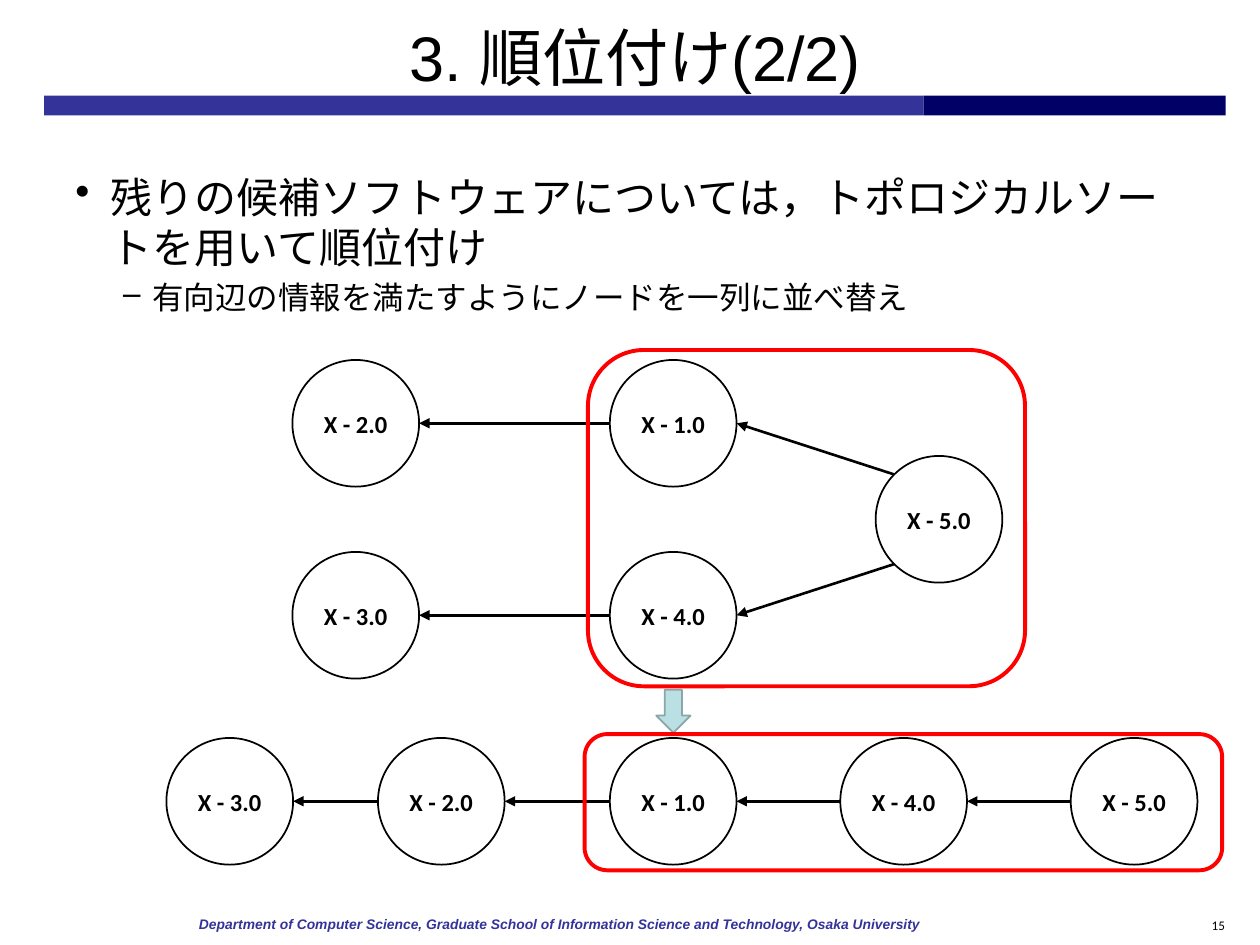
from dataclasses import dataclass
from itertools import pairwise
from math import sqrt

import pptx
import pptx.dml.color
import pptx.enum.shapes
import pptx.enum.text
import pptx.oxml
import pptx.oxml.ns
import pptx.util

Pt = pptx.util.Pt
Color = pptx.dml.color.RGBColor
Shape = pptx.enum.shapes.MSO_SHAPE
Align = pptx.enum.text.PP_ALIGN
Anchor = pptx.enum.text.MSO_ANCHOR


@dataclass(frozen=True)
class Theme:
    ink: Color = Color(0, 0, 0)
    bar: Color = Color(0x33, 0x33, 0x99)
    bar_end: Color = Color(0, 0, 0x66)
    highlight: Color = Color(0xFF, 0, 0)
    arrow_fill: Color = Color(0xBB, 0xE0, 0xE3)
    arrow_line: Color = Color(0x8A, 0xA6, 0xA8)
    heading_font: str = "Arial"
    body_font: str = "Calibri"
    title_size: float = 36
    body_size: float = 24
    detail_size: float = 18
    node_size: float = 14
    footer_size: float = 7.9
    number_size: float = 7.5


THEME = Theme()
DIAMETER = 72.4


@dataclass(frozen=True)
class Box:
    left: float
    top: float
    width: float
    height: float


@dataclass(frozen=True)
class Node:
    label: str
    left: float
    top: float

    @property
    def middle(self) -> float:
        return self.top + DIAMETER / 2

    @property
    def right(self) -> float:
        return self.left + DIAMETER


@dataclass(frozen=True)
class Bullet:
    text: str
    mark: str
    size: float
    margin: float
    hanging: float
    space_before: float


def add_run(paragraph, text: str, size: float, font: str, color: Color = THEME.ink,
            bold: bool = False, italic: bool = False) -> None:
    run = paragraph.add_run()
    run.text = text
    run.font.size = Pt(size)
    run.font.name = font
    run.font.color.rgb = color
    run.font.bold = bold
    run.font.italic = italic


def add_text_frame(slide, box: Box):
    text_box = slide.shapes.add_textbox(
        Pt(box.left), Pt(box.top), Pt(box.width), Pt(box.height))
    text_box.text_frame.word_wrap = True
    return text_box.text_frame


def add_shape(slide, kind, box: Box, fill: Color | None = None,
              line: Color | None = None, weight: float = 1):
    shape = slide.shapes.add_shape(
        kind, Pt(box.left), Pt(box.top), Pt(box.width), Pt(box.height))
    shape.shadow.inherit = False
    if fill is None:
        shape.fill.background()
    else:
        shape.fill.solid()
        shape.fill.fore_color.rgb = fill
    if line is None:
        shape.line.fill.background()
    else:
        shape.line.color.rgb = line
        shape.line.width = Pt(weight)
    return shape


def add_node(slide, node: Node) -> None:
    box = Box(node.left, node.top, DIAMETER, DIAMETER)
    frame = add_shape(slide, Shape.OVAL, box, line=THEME.ink).text_frame
    frame.vertical_anchor = Anchor.MIDDLE
    frame.margin_left = frame.margin_right = 0
    frame.paragraphs[0].alignment = Align.CENTER
    add_run(frame.paragraphs[0], node.label, THEME.node_size, THEME.body_font, bold=True)


def add_arrow(slide, source: Node, target: Node) -> None:
    """Point from the near edge of source to the right side of target."""
    start_x, start_y = source.left, source.middle
    if source.middle != target.middle:
        radius = DIAMETER / 2
        diagonal = radius / sqrt(2)
        start_x += radius - diagonal
        start_y += diagonal if target.middle > source.middle else -diagonal
    connector = slide.shapes.add_connector(
        pptx.enum.shapes.MSO_CONNECTOR.STRAIGHT,
        Pt(start_x), Pt(start_y), Pt(target.right), Pt(target.middle))
    connector.line.color.rgb = THEME.ink
    connector.line.width = Pt(1.5)
    line = connector.line._get_or_add_ln()
    pptx.oxml.ns.qn("a:tailEnd")
    line.append(pptx.oxml.parse_xml(
        f'<a:tailEnd {pptx.oxml.ns.nsdecls("a")} type="triangle"/>'))
    connector._element.spPr.append(pptx.oxml.parse_xml(
        f'<a:effectLst {pptx.oxml.ns.nsdecls("a")}/>'))


def add_bullet(paragraph, bullet: Bullet) -> None:
    properties = paragraph._p.get_or_add_pPr()
    properties.set("marL", str(Pt(bullet.margin)))
    properties.set("indent", str(-Pt(bullet.hanging)))
    properties.append(pptx.oxml.parse_xml(
        f'<a:buChar {pptx.oxml.ns.nsdecls("a")} char="{bullet.mark}"/>'))
    paragraph.space_before = Pt(bullet.space_before)
    add_run(paragraph, bullet.text, bullet.size, THEME.body_font)


def main() -> None:
    presentation = pptx.Presentation()
    presentation.slide_width, presentation.slide_height = Pt(720), Pt(540)
    slide = presentation.slides.add_slide(presentation.slide_layouts[6])

    # Title and the two-tone bar below it
    add_shape(slide, Shape.RECTANGLE, Box(25.2, 54.7, 502.6, 11.3), THEME.bar)
    add_shape(slide, Shape.RECTANGLE, Box(527.8, 54.7, 172.6, 11.3), THEME.bar_end)
    title = add_text_frame(slide, Box(25.2, 9.4, 675.4, 45.4))
    title.vertical_anchor = Anchor.MIDDLE
    title.paragraphs[0].alignment = Align.CENTER
    add_run(title.paragraphs[0], "3. 順位付け(2/2)", THEME.title_size, THEME.heading_font)

    # Bulleted text
    bullets = [
        Bullet("残りの候補ソフトウェアについては，トポロジカルソートを用いて順位付け",
               "•", THEME.body_size, 20.2, 20.2, 0),
        Bullet("有向辺の情報を満たすようにノードを一列に並べ替え",
               "–", THEME.detail_size, 43.9, 16.6, 3.6),
    ]
    body = add_text_frame(slide, Box(36, 94.3, 648, 100))
    for index, bullet in enumerate(bullets):
        add_bullet(body.add_paragraph() if index else body.paragraphs[0], bullet)

    # Graph before sorting
    left, center, upper, lower = 167.1, 348.5, 205.7, 315.4
    first, second = Node("X - 1.0", center, upper), Node("X - 2.0", left, upper)
    fourth, third = Node("X - 4.0", center, lower), Node("X - 3.0", left, lower)
    fifth = Node("X - 5.0", 500.4, (upper + lower) / 2)
    edges = [(first, second), (fourth, third), (fifth, first), (fifth, fourth)]

    # Sorted chain: the last three nodes are evenly spaced
    labels = ["X - 3.0", "X - 2.0", "X - 1.0", "X - 4.0", "X - 5.0"]
    lefts = [95.1, 216] + [center + 131.7 * step for step in range(3)]
    chain = [Node(label, x, 421.7) for label, x in zip(labels, lefts)]
    edges += [(source, target) for target, source in pairwise(chain)]

    for node in [first, second, third, fourth, fifth, *chain]:
        add_node(slide, node)
    for source, target in edges:
        add_arrow(slide, source, target)

    # Highlight frames and the step between them
    add_shape(slide, Shape.DOWN_ARROW, Box(375, 394.2, 19.6, 24.5),
              THEME.arrow_fill, THEME.arrow_line)
    for box in (Box(336, 200, 249.8, 192.2), Box(334.1, 419.5, 364.3, 77.8)):
        add_shape(slide, Shape.ROUNDED_RECTANGLE, box, line=THEME.highlight, weight=2.25)

    # Footer and page number
    footer = add_text_frame(slide, Box(108.7, 520.6, 600, 17.3))
    footer.margin_left = footer.margin_right = Pt(5)
    footer.margin_top = footer.margin_bottom = Pt(2.9)
    add_run(footer.paragraphs[0],
            "Department of Computer Science, Graduate School of Information Science "
            "and Technology, Osaka University",
            THEME.footer_size, THEME.heading_font, THEME.bar, bold=True, italic=True)
    number = add_text_frame(slide, Box(661.7, 520.6, 45.4, 20.9))
    number.paragraphs[0].alignment = Align.RIGHT
    add_run(number.paragraphs[0], "15", THEME.number_size, THEME.body_font)

    presentation.save("out.pptx")


if __name__ == "__main__":
    main()
